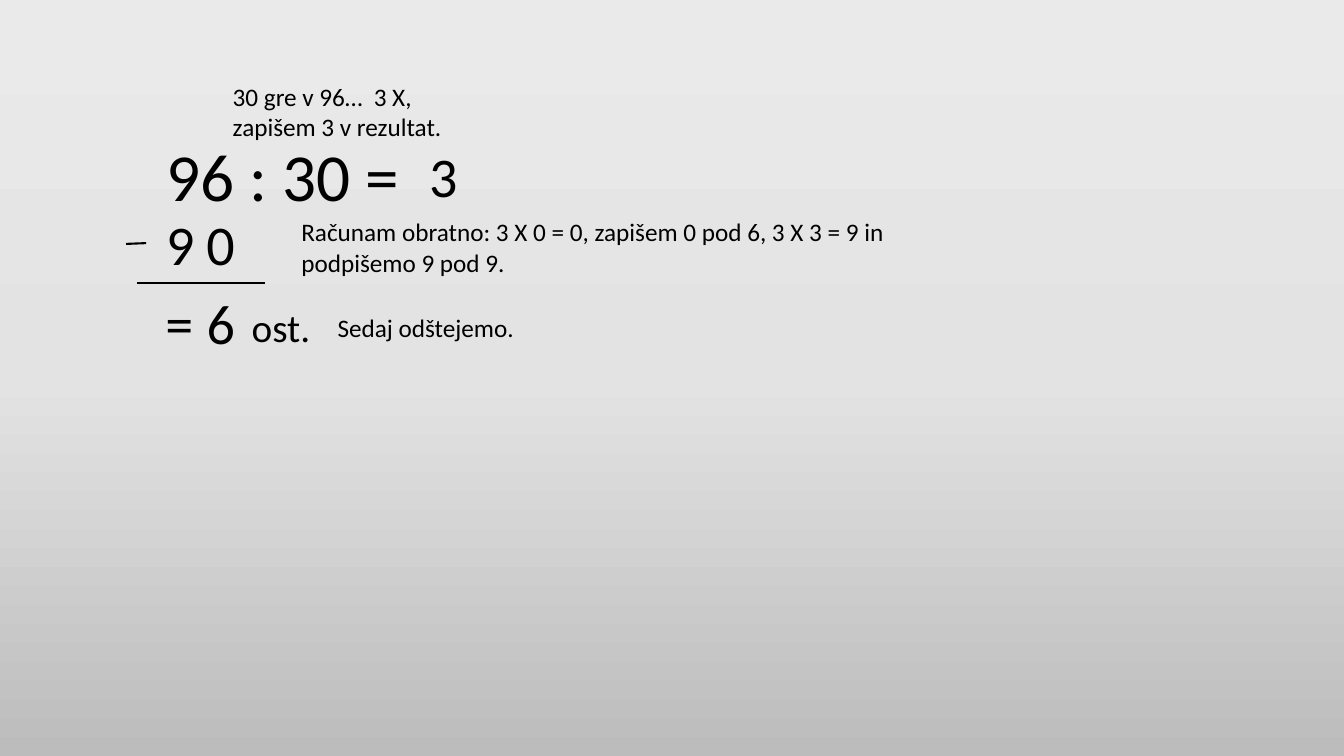
from copy import deepcopy

from lxml import etree
from pptx import Presentation
from pptx import util as u
from pptx.dml.color import RGBColor
from pptx.enum import shapes, text
from pptx.oxml import ns

THEME = {
    "font": "Calibri",
    "ink": RGBColor.from_string("000000"),
    "background": [(0, "EBEAEA"), (0.5, "E4E3E3"), (1, "BDBCBC")],
    "problem": 48,
    "digit": 40,
    "remainder": 28,
    "note": 18,
    "line": 1.5,
}

# Every digit of the long division has its own column and row.
LEFT, TOP = 1.55, 1.25
COLUMN, ROW = 0.4, 0.78


def grid_point(column, row):
    return u.Inches(LEFT + column * COLUMN), u.Inches(TOP + row * ROW)


presentation = Presentation()
presentation.slide_width = u.Inches(13.33)
presentation.slide_height = u.Inches(7.5)
slide = presentation.slides.add_slide(presentation.slide_layouts[6])

# Background: three-stop gradient from top to bottom
fill = slide.background.fill
fill.gradient()
fill.gradient_angle = 270
stop_list = slide.element.find(".//" + ns.qn("a:gsLst"))
stop_list.insert(1, deepcopy(stop_list[0]))
for stop, (position, color) in zip(fill.gradient_stops, THEME["background"]):
    stop.position = position
    stop.color.rgb = RGBColor.from_string(color)

# Texts: wording, size, column, row, width and height in inches
texts = [
    ("96 : 30 =", "problem", 0, 0.04, 2.67, 0.91),
    ("3", "digit", 6.52, 0.13, 0.45, 0.77),
    ("0", "digit", 1, 1, 0.53, 0.77),
    ("9", "digit", 0, 1, 0.53, 0.77),
    ("6", "digit", 1, 2, 0.45, 0.77),
    ("=", "digit", -0.02, 2, 0.45, 0.77),
    ("ost.", "remainder", 2.12, 2.19, 0.9, 0.57),
    ("30 gre v 96…  3 X, zapišem 3 v rezultat.", "note", 1.65, -0.63, 2.52, 0.71),
    ("Računam obratno: 3 X 0 = 0, zapišem 0 pod 6, 3 X 3 = 9 in podpišemo 9 pod 9.",
     "note", 3.35, 1.09, 6.21, 0.71),
    ("Sedaj odštejemo.", "note", 4.25, 2.31, 1.96, 0.4),
]
for wording, size, column, row, width, height in texts:
    box = slide.shapes.add_textbox(
        *grid_point(column, row), u.Inches(width), u.Inches(height))
    frame = box.text_frame
    frame.word_wrap = True
    frame.auto_size = text.MSO_AUTO_SIZE.SHAPE_TO_FIT_TEXT
    run = frame.paragraphs[0].add_run()
    run.text = wording
    font_format = {"name": THEME["font"], "size": u.Pt(THEME[size])}
    for attribute, value in font_format.items():
        setattr(run.font, attribute, value)
    run.font.color.rgb = THEME["ink"]

# Lines: the subtraction rule and the minus sign
lines = [
    ((-0.48, 2), (2.7, 2)),
    ((-0.75, 1.5), (-0.25, 1.49)),
]
for start, end in lines:
    connector = slide.shapes.add_connector(
        shapes.MSO_CONNECTOR.STRAIGHT, *grid_point(*start), *grid_point(*end))
    connector.line.color.rgb = THEME["ink"]
    connector.line.width = u.Pt(THEME["line"])
    etree.SubElement(connector.element.spPr, ns.qn("a:effectLst"))

presentation.save("out.pptx")
